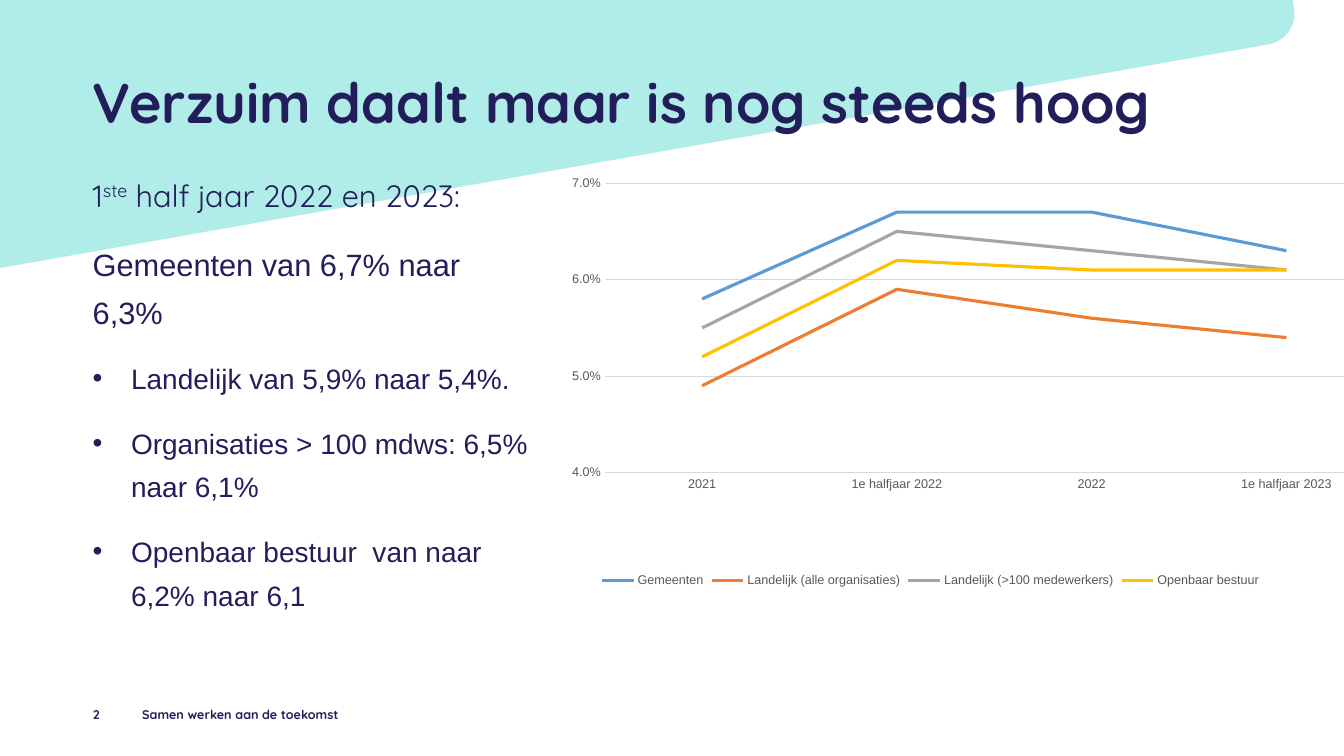
from lxml.etree import SubElement
from pptx import Presentation
from pptx.chart.data import CategoryChartData
from pptx.dml.color import RGBColor
from pptx.enum.chart import XL_CHART_TYPE as ChartType, XL_LEGEND_POSITION as LegendPosition
from pptx.enum.chart import XL_MARKER_STYLE as MarkerStyle, XL_TICK_MARK as TickMark
from pptx.enum.shapes import MSO_SHAPE as ShapeType
from pptx.enum.text import MSO_ANCHOR as Anchor, MSO_AUTO_SIZE as AutoSize, PP_ALIGN as Align
from pptx.oxml import parse_xml
from pptx.oxml.ns import nsdecls, qn
from pptx.util import Inches, Pt

COLORS = {"navy": "211E5B", "mint": "B1EDE8", "grid": "D9D9D9", "label": "595959", "black": "000000"}
HEADING_FONT, BODY_FONT = "Quicksand", "Arial"
LEFT = 0.92

TITLE = "Verzuim daalt maar is nog steeds hoog"
FOOTER = [("2", LEFT, 0.48), ("Samen werken aan de toekomst", 1.41, 3.58)]

# Each paragraph: bulleted, size, font, runs of (text, baseline)
BODY = [
    (False, 22, HEADING_FONT, [("1", None), ("ste", "30000"), (" half jaar 2022 en 2023:", None)]),
    (False, 22, BODY_FONT, [("Gemeenten van 6,7% naar 6,3%", None)]),
    (True, 20, BODY_FONT, [("Landelijk van 5,9% naar 5,4%.", None)]),
    (True, 20, BODY_FONT, [("Organisaties > 100 mdws: 6,5% naar 6,1%", None)]),
    (True, 20, BODY_FONT, [("Openbaar bestuur  van naar 6,2% naar 6,1", None)]),
]

PERIODS = ["2021", "1e halfjaar 2022", "2022", "1e halfjaar 2023"]
SERIES = [
    ("Gemeenten", "5B9BD5", (0.058, 0.067, 0.067, 0.063)),
    ("Landelijk (alle organisaties)", "ED7D31", (0.049, 0.059, 0.056, 0.054)),
    ("Landelijk (>100 medewerkers)", "A5A5A5", (0.055, 0.065, 0.063, 0.061)),
    ("Openbaar bestuur", "FFC000", (0.052, 0.062, 0.061, 0.061)),
]
PLOT_AREA = {"x": 0.141, "y": 0.042, "w": 0.859, "h": 0.679}


def rgb(name):
    return RGBColor.from_string(COLORS.get(name, name))


def set_font(font, size, color, name=BODY_FONT, bold=False):
    font.size, font.name, font.bold = Pt(size), name, bold
    font.color.rgb = rgb(color)


def set_line(line, color, width):
    line.color.rgb = rgb(color)
    line.width = Pt(width)


def prepare_frame(shape, left, top, width, height):
    """Place a text shape and give it a wrapping, top-anchored frame without margins."""
    shape.left, shape.top, shape.width, shape.height = map(Inches, (left, top, width, height))
    frame = shape.text_frame
    frame.margin_left = frame.margin_top = frame.margin_right = frame.margin_bottom = 0
    frame.word_wrap = True
    frame.auto_size = AutoSize.NONE
    frame.vertical_anchor = Anchor.TOP
    return frame


def add_run(paragraph, text, size, font, bold=False):
    run = paragraph.add_run()
    run.text = text
    set_font(run.font, size, "navy", font, bold)
    return run


def add_heading(shape, box, text, size):
    paragraph = prepare_frame(shape, *box).paragraphs[0]
    paragraph.alignment = Align.LEFT
    add_run(paragraph, text, size, HEADING_FONT, True)


def add_banner(slide):
    banner = slide.shapes.add_shape(ShapeType.ROUNDED_RECTANGLE, Inches(-0.75), Inches(-1.09),
                                    Inches(13.51), Inches(2.67))
    banner.adjustments[0] = 0.117
    banner.rotation = 350
    banner.shadow.inherit = False
    banner.fill.solid()
    banner.fill.fore_color.rgb = rgb("mint")
    banner.line.fill.background()
    banner._element.getparent().insert(2, banner._element)  # behind the title


def add_body(slide):
    frame = prepare_frame(slide.shapes.add_textbox(0, 0, 0, 0), LEFT, 1.64, 4.36, 4.76)
    for index, (bulleted, size, font, runs) in enumerate(BODY):
        paragraph = frame.add_paragraph() if index else frame.paragraphs[0]
        paragraph.line_spacing = 1.3
        paragraph.space_before = Pt(5 if index else 0)
        paragraph.space_after = Pt(10)
        if bulleted:
            properties = paragraph._p.get_or_add_pPr()
            properties.set("marL", str(Inches(0.38)))
            properties.set("indent", str(Inches(-0.38)))
            SubElement(properties, qn("a:buFont")).set("typeface", BODY_FONT)
            SubElement(properties, qn("a:buChar")).set("char", "•")
        for text, baseline in runs:
            run = add_run(paragraph, text, size, font)
            if baseline:
                run.font._element.set("baseline", baseline)


def fix_plot_area(chart):
    """Give the inner plot area a manual layout, in fractions of the chart."""
    places = "".join(f'<c:{key} val="{value}"/>' for key, value in PLOT_AREA.items())
    layout = parse_xml(
        f'<c:layout {nsdecls("c")}><c:manualLayout><c:layoutTarget val="inner"/>'
        f'<c:xMode val="edge"/><c:yMode val="edge"/>{places}</c:manualLayout></c:layout>')
    plot_area = chart._chartSpace.chart.plotArea
    for old in plot_area.findall(qn("c:layout")):
        plot_area.remove(old)
    plot_area.insert(0, layout)


def add_absence_chart(slide):
    data = CategoryChartData(number_format="0.0%")
    data.categories = PERIODS
    for name, _, values in SERIES:
        data.add_series(name, values)
    chart = slide.shapes.add_chart(ChartType.LINE, Inches(4.73), Inches(1.64),
                                   Inches(9), Inches(4.23), data).chart
    chart.has_title = False
    set_font(chart.font, 10, "black")
    chart.plots[0].vary_by_categories = False
    for series, (_, color, _) in zip(chart.plots[0].series, SERIES):
        series.smooth = False
        series.marker.style = MarkerStyle.NONE
        set_line(series.format.line, color, 2.25)

    for axis in (chart.category_axis, chart.value_axis):
        axis.major_tick_mark = axis.minor_tick_mark = TickMark.NONE
        set_font(axis.tick_labels.font, 9, "label")
    set_line(chart.category_axis.format.line, "grid", 0.75)

    rates = chart.value_axis
    rates.minimum_scale, rates.maximum_scale, rates.major_unit = 0.04, 0.07, 0.01
    rates.tick_labels.number_format = "0.0%"
    rates.tick_labels.number_format_is_linked = False
    rates.format.line.fill.background()
    rates.has_major_gridlines = True
    set_line(rates.major_gridlines.format.line, "grid", 0.75)

    chart.has_legend = True
    chart.legend.position = LegendPosition.BOTTOM
    chart.legend.include_in_layout = False
    set_font(chart.legend.font, 9, "label")
    fix_plot_area(chart)


def main():
    presentation = Presentation()
    presentation.slide_width, presentation.slide_height = Inches(13.33), Inches(7.5)
    slide = presentation.slides.add_slide(presentation.slide_layouts[5])
    add_banner(slide)
    add_heading(slide.shapes.title, (LEFT, 0.67, 11.25, 1.32), TITLE, 40)
    for text, left, width in FOOTER:
        add_heading(slide.shapes.add_textbox(0, 0, 0, 0), (left, 7.01, width, 0.4), text, 9)
    add_absence_chart(slide)
    add_body(slide)
    presentation.save("out.pptx")


if __name__ == "__main__":
    main()
